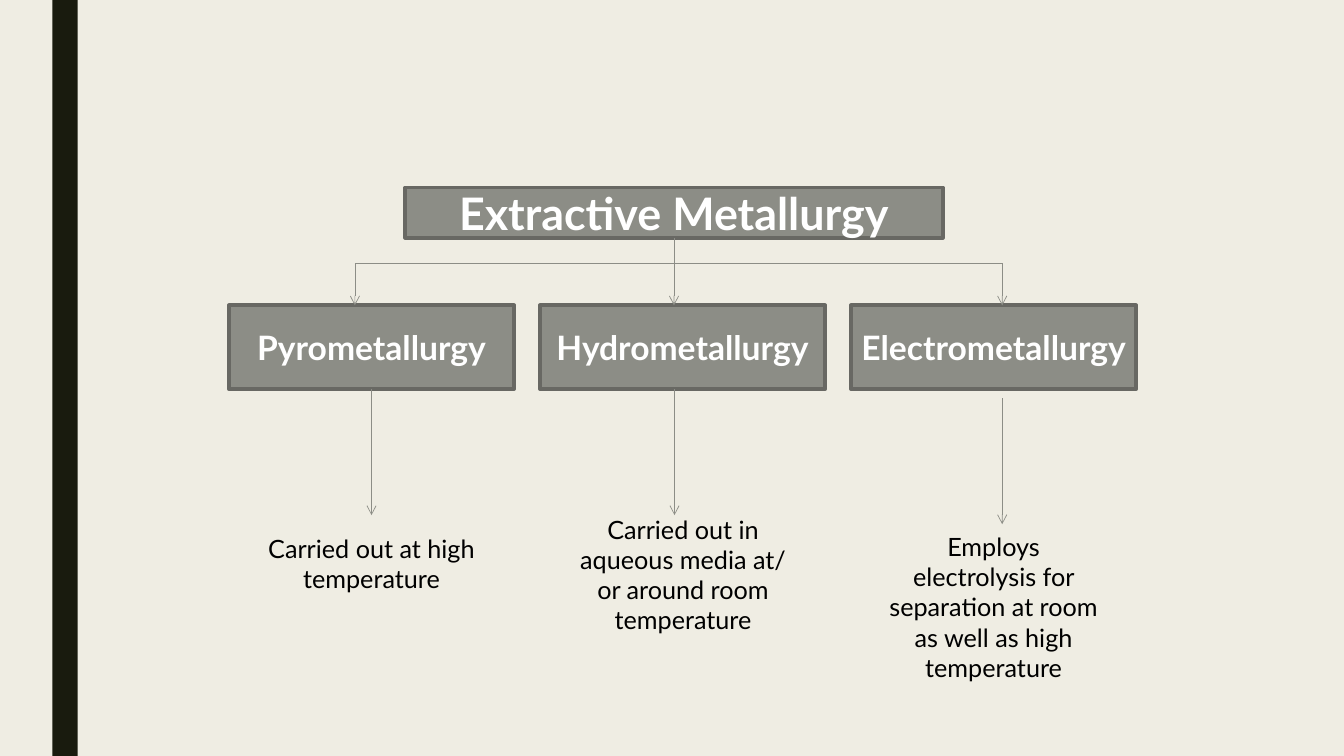
from dataclasses import dataclass
from typing import Optional

from lxml.etree import SubElement
from pptx import Presentation
from pptx.dml.color import RGBColor
from pptx.enum.shapes import MSO_CONNECTOR as Link, MSO_SHAPE as Kind
from pptx.enum.text import MSO_ANCHOR as Anchor, PP_ALIGN as Align
from pptx.oxml.ns import qn
from pptx.shapes.autoshape import Shape
from pptx.text.text import TextFrame
from pptx.util import Inches, Pt

PAPER, DARK, GRAY, EDGE = "EFEDE3", "191B0E", "8C8D86", "686863"
WHITE, BLACK = "FFFFFF", "000000"
BOTTOM = 2


@dataclass
class Box:
    text: str
    left: float
    top: float
    width: float
    height: float
    size: int = 24


@dataclass
class Arrow:
    x: float
    top: float
    end: float
    source: Optional[str] = None  # box whose bottom middle it leaves


@dataclass
class Note:
    text: str
    left: float
    top: float
    height: float


ROOT = "Extractive Metallurgy"
BRANCHES = ["Pyrometallurgy", "Hydrometallurgy", "Electrometallurgy"]
ROW, PITCH, BAR = 3.03, 3.085, 2.61
LEFT, MID, RIGHT = 3.52, 6.69, 9.94

BOXES = [Box(ROOT, 4.02, 1.86, 5.33, 0.5, 32)] + [
    Box(name, 2.27 + i * PITCH, ROW, 2.83, 0.83) for i, name in enumerate(BRANCHES)
]
ARROWS = [
    Arrow(MID, 2.36, ROW, ROOT),
    Arrow(LEFT, BAR, ROW),
    Arrow(RIGHT, BAR, ROW),
    Arrow(3.69, 3.86, 5.11, BRANCHES[0]),
    Arrow(MID, 3.86, 5.11),
    Arrow(RIGHT, 3.95, 5.2),
]
NOTES = [
    Note("Carried out at high temperature", 2.52, 5.24, 0.71),
    Note("Carried out in aqueous media at/ or around room temperature", 5.61, 5.05, 1.31),
    Note("Employs electrolysis for separation at room as well as high temperature",
         8.69, 5.22, 1.31),
]


def color(code: str) -> RGBColor:
    return RGBColor.from_string(code)


def write(frame: TextFrame, text: str, size: int, code: str, bold: bool) -> None:
    frame.word_wrap = True
    para = frame.paragraphs[0]
    para.alignment = Align.CENTER
    run = para.add_run()
    run.text = text
    look = {"name": "Lato", "size": Pt(size), "bold": bold}
    for key, value in look.items():
        setattr(run.font, key, value)
    run.font.color.rgb = color(code)


def add_rect(shapes, left: float, top: float, width: float, height: float,
             fill: str) -> Shape:
    rect = shapes.add_shape(Kind.RECTANGLE, *map(Inches, (left, top, width, height)))
    rect.shadow.inherit = False
    rect.fill.solid()
    rect.fill.fore_color.rgb = color(fill)
    rect.line.fill.background()
    return rect


def add_box(shapes, box: Box) -> Shape:
    rect = add_rect(shapes, box.left, box.top, box.width, box.height, GRAY)
    rect.line.color.rgb = color(EDGE)
    rect.line.width = Pt(2.75)
    rect.text_frame.vertical_anchor = Anchor.MIDDLE
    write(rect.text_frame, box.text, box.size, WHITE, True)
    return rect


def add_line(shapes, x1: float, y1: float, x2: float, y2: float,
             source: Optional[Shape] = None, head: bool = True) -> None:
    line = shapes.add_connector(Link.STRAIGHT, *map(Inches, (x1, y1, x2, y2)))
    if source is not None:
        line.begin_connect(source, BOTTOM)
        line.end_x = line.begin_x
    line.line.color.rgb = color(GRAY)
    line.line.width = Pt(0.5)
    if head:
        SubElement(line.line._get_or_add_ln(), qn("a:tailEnd"), type="arrow")
    SubElement(line._element.spPr, qn("a:effectLst"))


def add_note(shapes, note: Note) -> None:
    area = map(Inches, (note.left, note.top, 2.33, note.height))
    write(shapes.add_textbox(*area).text_frame, note.text, 18, BLACK, False)


def main() -> None:
    deck = Presentation()
    deck.slide_width, deck.slide_height = Inches(13.33), Inches(7.5)
    slide = deck.slides.add_slide(deck.slide_layouts[6])
    slide.background.fill.solid()
    slide.background.fill.fore_color.rgb = color(PAPER)
    shapes = slide.shapes

    add_rect(shapes, 0.52, 0, 0.25, 7.5, DARK)
    rects = {box.text: add_box(shapes, box) for box in BOXES}
    add_line(shapes, LEFT, BAR, RIGHT, BAR, head=False)
    for arrow in ARROWS:
        add_line(shapes, arrow.x, arrow.top, arrow.x, arrow.end, rects.get(arrow.source))
    for note in NOTES:
        add_note(shapes, note)
    deck.save("out.pptx")


if __name__ == "__main__":
    main()
